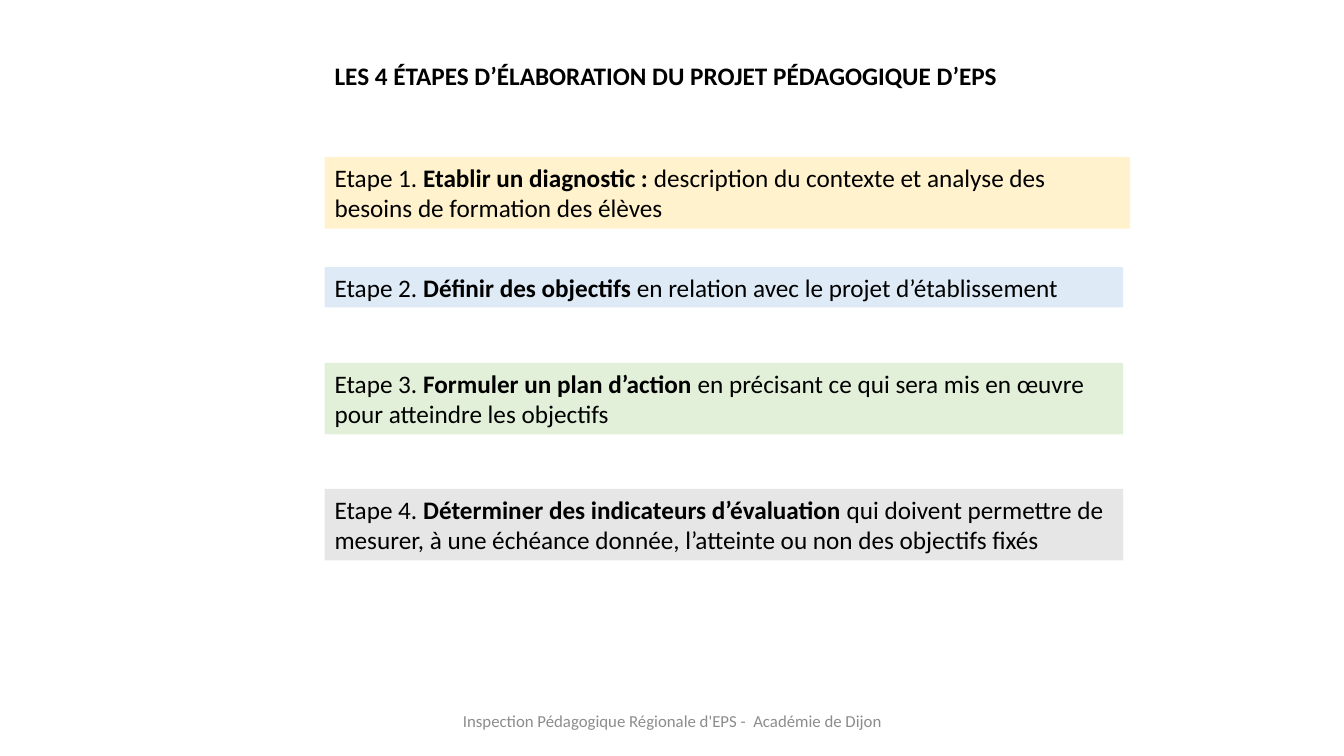
from pptx import Presentation
from pptx.dml.color import RGBColor
from pptx.enum.text import MSO_ANCHOR as ANCHOR, PP_ALIGN as ALIGN
from pptx.util import Inches, Pt

BLACK = RGBColor(0x00, 0x00, 0x00)
GREY = RGBColor(0x8C, 0x8C, 0x8C)
YELLOW = RGBColor(0xFF, 0xF2, 0xCC)
BLUE = RGBColor(0xDE, 0xEB, 0xF7)
GREEN = RGBColor(0xE2, 0xF0, 0xD9)
SILVER = RGBColor(0xE7, 0xE6, 0xE6)

TITLE = "LES 4 ÉTAPES D’ÉLABORATION DU PROJET PÉDAGOGIQUE D’EPS"
FOOTER = "Inspection Pédagogique Régionale d'EPS -  Académie de Dijon"
STEPS = [
    ("Etablir un diagnostic : ",
     "description du contexte et analyse des besoins de formation des élèves",
     1.56, 7.99, 0.71, YELLOW),
    ("Définir des objectifs ",
     "en relation avec le projet d’établissement",
     2.65, 7.92, 0.4, BLUE),
    ("Formuler un plan d’action ",
     "en précisant ce qui sera mis en œuvre pour atteindre les objectifs",
     3.6, 7.92, 0.71, GREEN),
    ("Déterminer des indicateurs d’évaluation ",
     "qui doivent permettre de mesurer, à une échéance donnée, "
     "l’atteinte ou non des objectifs fixés",
     4.85, 7.92, 0.71, SILVER),
]
LEFT = 3.22

prs = Presentation()
prs.slide_width, prs.slide_height = Inches(13.33), Inches(7.5)
s = prs.slides.add_slide(prs.slide_layouts[6])


def add_text(runs, box, size=18, color=BLACK, fill=None,
             align=ALIGN.LEFT, anchor=ANCHOR.TOP):
    sp = s.shapes.add_textbox(*map(Inches, box))
    if fill is not None:
        sp.fill.solid()
        sp.fill.fore_color.rgb = fill
    tf = sp.text_frame
    tf.word_wrap = True
    tf.vertical_anchor = anchor
    p = tf.paragraphs[0]
    p.alignment = align
    for text, bold in runs:
        r = p.add_run()
        r.text = text
        r.font.name = "Calibri"
        r.font.size = Pt(size)
        r.font.bold = bold
        r.font.color.rgb = color


add_text([(TITLE, True)], (LEFT, 0.55, 8.49, 0.4))
for number, (goal, detail, top, width, height, fill) in enumerate(STEPS, 1):
    add_text([(f"Etape {number}. ", False), (goal, True), (detail, False)],
             (LEFT, top, width, height), fill=fill)
add_text([(FOOTER, False)], (4.42, 6.95, 4.5, 0.4), size=12, color=GREY,
         align=ALIGN.CENTER, anchor=ANCHOR.MIDDLE)

prs.save("out.pptx")
